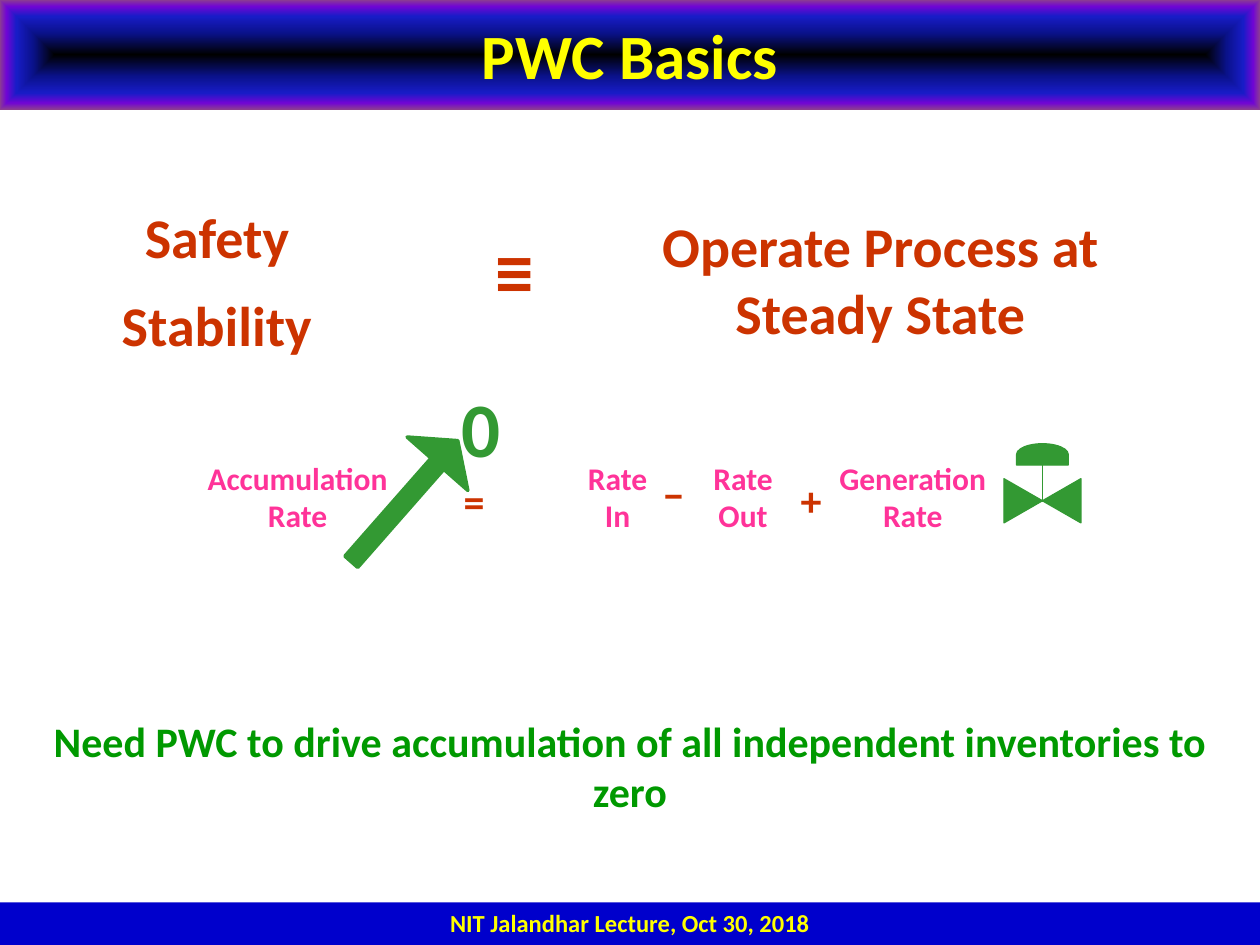
"""Build the PWC Basics slide: steady state, the inventory balance and its control valve."""
import lxml.etree
import pptx
import pptx.dml.color
import pptx.enum.shapes
import pptx.enum.text
import pptx.oxml.ns
import pptx.util

Cm = pptx.util.Cm
SHAPES = pptx.enum.shapes.MSO_SHAPE
ANCHORS = pptx.enum.text.MSO_ANCHOR
qn = pptx.oxml.ns.qn


def color(hex_string):
    return pptx.dml.color.RGBColor.from_string(hex_string)


def write(shape, lines, size, font_color, wrap=False, anchor=ANCHORS.TOP, gap=0):
    frame = shape.text_frame
    for name, value in {"word_wrap": wrap, "vertical_anchor": anchor}.items():
        setattr(frame, name, value)
    font_format = {"name": "Calibri", "size": pptx.util.Pt(size), "bold": True}
    for index, line in enumerate(lines):
        paragraph = frame.paragraphs[0] if index == 0 else frame.add_paragraph()
        paragraph.alignment = pptx.enum.text.PP_ALIGN.CENTER
        paragraph.space_before = pptx.util.Pt(gap if index else 0)
        run = paragraph.add_run()
        run.text = line
        for name, value in font_format.items():
            setattr(run.font, name, value)
        run.font.color.rgb = color(font_color)


presentation = pptx.Presentation()
presentation.slide_width = Cm(25.4)
presentation.slide_height = Cm(19.05)
slide = presentation.slides.add_slide(presentation.slide_layouts[6])

BLUE, YELLOW, RED, PINK = "0000CC", "FFFF00", "CC3300", "FF3399"
GREEN, DARK_GREEN = "339933", "009900"

bars = [
    (18.19, 0.86, "NIT Jalandhar Lecture, Oct 30, 2018", 14, ANCHORS.TOP),
    (0, 2.21, "PWC Basics", 36, ANCHORS.MIDDLE),
]
for top, height, text, size, anchor in bars:
    bar = slide.shapes.add_shape(SHAPES.RECTANGLE, 0, Cm(top), Cm(25.4), Cm(height))
    bar.shadow.inherit = False
    bar.fill.solid()
    bar.fill.fore_color.rgb = color(BLUE)
    bar.line.fill.background()
    write(bar, [text], size, YELLOW, True, anchor)

title = bar
title.fill.gradient()
gradient = title.fill._xPr.find(qn("a:gradFill"))
for child in list(gradient):
    gradient.remove(child)
stops = lxml.etree.SubElement(gradient, qn("a:gsLst"))
title_stops = [(0, "000000"), (40, "0A128C"), (70, "181CC7"), (88, "7005D4"), (100, "8C3D91")]
for percent, stop_color in title_stops:
    stop = lxml.etree.SubElement(stops, qn("a:gs"), pos=str(percent * 1000))
    lxml.etree.SubElement(stop, qn("a:srgbClr"), val=stop_color)
gradient_shape = lxml.etree.SubElement(gradient, qn("a:path"), {"path": "rect"})
center = dict.fromkeys("ltrb", "50000")
lxml.etree.SubElement(gradient_shape, qn("a:fillToRect"), center)

valve_and_arrow = [
    (SHAPES.UP_ARROW, 7.34, 8.48, 1.63, 3.25, 41.3, 2),
    (SHAPES.FLOWCHART_COLLATE, 20.57, 9.32, 0.89, 1.55, 270, 0.75),
    (SHAPES.FLOWCHART_DELAY, 20.8, 8.64, 0.43, 1.04, 270, 0.75),
]
for kind, left, top, width, height, rotation, line_width in valve_and_arrow:
    shape = slide.shapes.add_shape(kind, Cm(left), Cm(top), Cm(width), Cm(height))
    shape.shadow.inherit = False
    shape.rotation = rotation
    shape.fill.solid()
    shape.fill.fore_color.rgb = color(GREEN)
    shape.line.color.rgb = color(GREEN)
    shape.line.width = pptx.util.Pt(line_width)
    if kind == SHAPES.UP_ARROW:
        shape.adjustments[0] = 0.21
        shape.adjustments[1] = 0.38

stem = slide.shapes.add_connector(
    pptx.enum.shapes.MSO_CONNECTOR.STRAIGHT, Cm(21.01), Cm(10.11), Cm(21.01), Cm(9.37))
stem.line.color.rgb = color(GREEN)
stem.line.width = pptx.util.Pt(0.75)
lxml.etree.SubElement(stem._element.spPr, qn("a:effectLst"))

texts = [
    (2.18, 3.96, 4.39, 3.43, ["Safety", "Stability"], 32, RED, False, 12),
    (9.73, 4.37, 1.3, 2.13, ["≡"], 44, RED, False, 0),
    (12.29, 4.14, 10.92, 3, ["Operate Process at Steady State"], 32, RED, True, 0),
    (3.9, 9.12, 4.2, 1.8, ["Accumulation", "Rate"], 18, PINK, False, 0),
    (11.5, 9.12, 1.9, 1.8, ["Rate", "In"], 18, PINK, False, 0),
    (14.03, 9.12, 1.9, 1.8, ["Rate", "Out"], 18, PINK, False, 0),
    (16.6, 9.12, 3.6, 1.8, ["Generation", "Rate"], 18, PINK, False, 0),
    (9.09, 9.47, 0.94, 1.27, ["="], 24, RED, False, 0),
    (13.11, 9.32, 0.94, 1.27, ["−"], 24, RED, False, 0),
    (15.88, 9.45, 0.94, 1.27, ["+"], 24, RED, False, 0),
    (9.04, 7.54, 1.3, 2.13, ["0"], 44, GREEN, False, 0),
    (0, 14.3, 25.4, 1.27,
     ["Need PWC to drive accumulation of all independent inventories to zero"],
     24, DARK_GREEN, False, 0),
]
for left, top, width, height, lines, size, font_color, wrap, gap in texts:
    box = slide.shapes.add_textbox(Cm(left), Cm(top), Cm(width), Cm(height))
    write(box, lines, size, font_color, wrap, gap=gap)

presentation.save("out.pptx")
